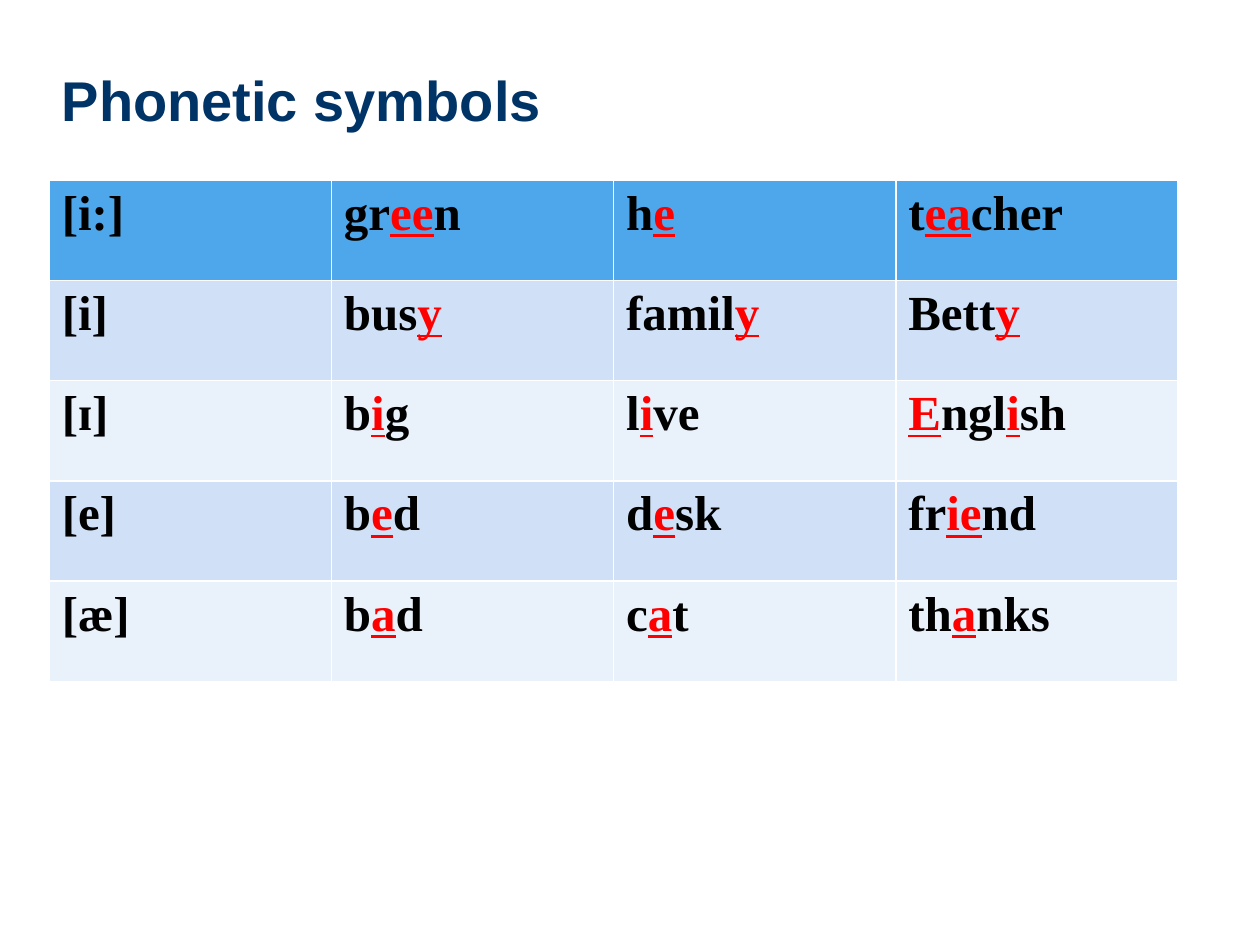
import pptx
import pptx.dml.color
import pptx.enum.text
import pptx.util

Inches = pptx.util.Inches

COLORS = {
    "title": "003366",
    "text": "000000",
    "mark": "FF0000",
    "head": "4EA7EA",
    "odd": "D0E1F7",
    "even": "E9F1FB",
}

ROWS = [
    ["[i:]", "gr*ee*n", "h*e*", "t*ea*cher"],
    ["[i]", "bus*y*", "famil*y*", "Bett*y*"],
    ["[ɪ]", "b*i*g", "l*i*ve", "*E*ngl*i*sh"],
    ["[e]", "b*e*d", "d*e*sk", "fr*ie*nd"],
    ["[æ]", "b*a*d", "c*a*t", "th*a*nks"],
]


def color(name):
    """Return the named colour."""
    return pptx.dml.color.RGBColor.from_string(COLORS[name])


def style(font, face, size, tone):
    """Apply a bold face, size and colour to a font."""
    font.name = face
    font.size = pptx.util.Pt(size)
    font.bold = True
    font.color.rgb = color(tone)


def add_title(slide, text, left, top, width, height):
    """Place and format the slide title."""
    title = slide.shapes.title
    title.left, title.top = Inches(left), Inches(top)
    title.width, title.height = Inches(width), Inches(height)
    frame = title.text_frame
    frame.text = text
    frame.vertical_anchor = pptx.enum.text.MSO_ANCHOR.MIDDLE
    para = frame.paragraphs[0]
    para.alignment = pptx.enum.text.PP_ALIGN.LEFT
    style(para.runs[0].font, "Arial", 32, "title")


def fill_cell(cell, word, tone):
    """Write a word in a cell, with the letters between asterisks marked."""
    cell.fill.solid()
    cell.fill.fore_color.rgb = color(tone)
    para = cell.text_frame.paragraphs[0]
    for index, part in enumerate(word.split("*")):
        if part:
            run = para.add_run()
            run.text = part
            marked = index % 2 == 1
            style(run.font, "Times New Roman", 28, "mark" if marked else "text")
            run.font.underline = marked


def add_sounds(slide, rows, left, top, width, height):
    """Add the table of sounds and sample words."""
    box = [Inches(n) for n in (left, top, width, height)]
    table = slide.shapes.add_table(len(rows), len(rows[0]), *box).table
    for r, words in enumerate(rows):
        tone = "head" if r == 0 else "odd" if r % 2 else "even"
        for c, word in enumerate(words):
            fill_cell(table.cell(r, c), word, tone)


def main():
    """Build and save the slide."""
    deck = pptx.Presentation()
    deck.slide_width, deck.slide_height = Inches(10), Inches(7.5)
    slide = deck.slides.add_slide(deck.slide_layouts[5])
    add_title(slide, "Phonetic symbols", 0.39, 0.52, 7.75, 0.53)
    add_sounds(slide, ROWS, 0.39, 1.43, 8.96, 3.98)
    deck.save("out.pptx")


if __name__ == "__main__":
    main()
